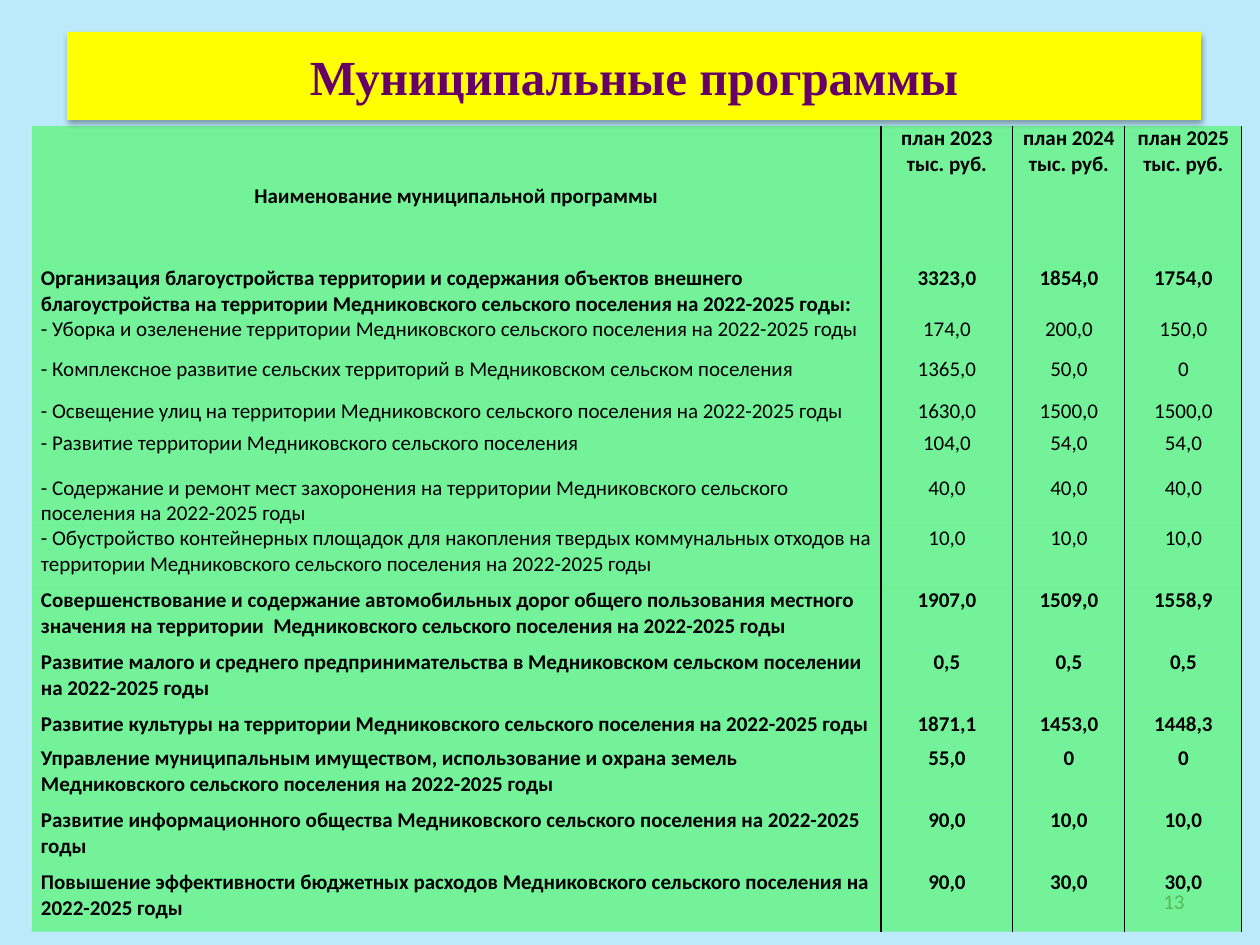
from lxml import etree
from pptx import Presentation
from pptx import util as u
from pptx.dml.color import RGBColor
from pptx.enum import text
from pptx.oxml import ns

SCALE = 914400 / 126
SKY = RGBColor(0xBC, 0xEA, 0xFB)
YELLOW = RGBColor(0xFF, 0xFF, 0x00)
PURPLE = RGBColor(0x66, 0x00, 0x66)
GREEN = RGBColor(0x00, 0xFF, 0x00)
BLACK = RGBColor(0x00, 0x00, 0x00)
GREY = RGBColor(0x8C, 0x8C, 0x8C)
NO_GRID_STYLE = "{2D5ABB26-0587-4C30-8999-92F81FD0307C}"

COLUMN_WIDTHS = [849, 132, 112, 117]
ROW_HEIGHTS = [140, 49, 40, 42, 32, 45, 49, 62, 62, 62, 34, 62, 62, 62]
PROGRAMS = [
    ("Наименование муниципальной программы", "план 2023 тыс. руб.", "план 2024 тыс. руб.", "план 2025 тыс. руб."),
    ("Организация благоустройства территории и содержания объектов внешнего благоустройства на территории Медниковского сельского поселения на 2022-2025 годы:", "3323,0", "1854,0", "1754,0"),
    ("- Уборка и озеленение территории Медниковского сельского поселения на 2022-2025 годы", "174,0", "200,0", "150,0"),
    ("- Комплексное развитие сельских территорий в Медниковском сельском поселения", "1365,0", "50,0", "0"),
    ("- Освещение улиц на территории Медниковского сельского поселения на 2022-2025 годы", "1630,0", "1500,0", "1500,0"),
    ("- Развитие территории Медниковского сельского поселения", "104,0", "54,0", "54,0"),
    ("- Содержание и ремонт мест захоронения на территории Медниковского сельского поселения на 2022-2025 годы", "40,0", "40,0", "40,0"),
    ("- Обустройство контейнерных площадок для накопления твердых коммунальных отходов на территории Медниковского сельского поселения на 2022-2025 годы", "10,0", "10,0", "10,0"),
    ("Совершенствование и содержание автомобильных дорог общего пользования местного значения на территории  Медниковского сельского поселения на 2022-2025 годы", "1907,0", "1509,0", "1558,9"),
    ("Развитие малого и среднего предпринимательства в Медниковском сельском поселении на 2022-2025 годы", "0,5", "0,5", "0,5"),
    ("Развитие культуры на территории Медниковского сельского поселения на 2022-2025 годы", "1871,1", "1453,0", "1448,3"),
    ("Управление муниципальным имуществом, использование и охрана земель Медниковского сельского поселения на 2022-2025 годы", "55,0", "0", "0"),
    ("Развитие информационного общества Медниковского сельского поселения на 2022-2025 годы", "90,0", "10,0", "10,0"),
    ("Повышение эффективности бюджетных расходов Медниковского сельского поселения на 2022-2025 годы", "90,0", "30,0", "30,0"),
]


def px(length):
    return u.Emu(round(length * SCALE))


def add_child(parent, tag, **attributes):
    return etree.SubElement(parent, ns.qn(tag), attributes)


def format_text(frame, align, size, color, bold=False, font="Calibri"):
    para = frame.paragraphs[0]
    para.alignment = align
    for span in para.runs:
        span.font.name = font
        span.font.size = u.Pt(size)
        span.font.bold = bold
        span.font.color.rgb = color


def add_page_number(page, left, top, width, height):
    box = page.shapes.add_textbox(px(left), px(top), px(width), px(height))
    frame = box.text_frame
    frame.word_wrap = True
    frame.vertical_anchor = text.MSO_ANCHOR.MIDDLE
    frame.text = "13"
    format_text(frame, text.PP_ALIGN.RIGHT, 12, GREY)


def add_border(properties, tag):
    line = add_child(properties, tag, w=str(u.Pt(0.75)))
    add_child(add_child(line, "a:solidFill"), "a:srgbClr", val=str(BLACK))


def fill_cell(cell, wording, is_header, is_name, bold):
    cell.margin_left = cell.margin_right = px(9)
    cell.margin_top = cell.margin_bottom = 0
    cell.vertical_anchor = text.MSO_ANCHOR.MIDDLE if is_header and is_name else text.MSO_ANCHOR.TOP
    cell.text_frame.text = wording
    align = text.PP_ALIGN.LEFT if is_name and not is_header else text.PP_ALIGN.CENTER
    format_text(cell.text_frame, align, 12, BLACK, bold)
    properties = cell._tc.get_or_add_tcPr()
    if not is_name:
        add_border(properties, "a:lnL")
    add_border(properties, "a:lnR")
    cell.fill.solid()
    cell.fill.fore_color.rgb = GREEN
    add_child(properties.find(ns.qn("a:solidFill"))[0], "a:alpha", val="39000")


def add_program_table(page, left, top):
    holder = page.shapes.add_table(
        len(PROGRAMS), len(COLUMN_WIDTHS), px(left), px(top), px(sum(COLUMN_WIDTHS)), px(sum(ROW_HEIGHTS))
    )
    table = holder.table
    table.horz_banding = False
    table._tbl.tblPr.find(ns.qn("a:tableStyleId")).text = NO_GRID_STYLE
    for column, width in zip(table.columns, COLUMN_WIDTHS):
        column.width = px(width)
    for row_index, (row, height, program) in enumerate(zip(table.rows, ROW_HEIGHTS, PROGRAMS)):
        row.height = px(height)
        bold = not program[0].startswith("-")
        for column_index, wording in enumerate(program):
            fill_cell(row.cells[column_index], wording, row_index == 0, column_index == 0, bold)


def place_title(page, left, top, width, height):
    title = page.shapes.title
    title.left, title.top, title.width, title.height = map(px, (left, top, width, height))
    title.fill.solid()
    title.fill.fore_color.rgb = YELLOW
    effects = add_child(title._element.spPr, "a:effectLst")
    shadow = add_child(
        effects, "a:outerShdw", blurRad=str(u.Pt(3.1)), dist=str(u.Pt(1.8)), dir="5400000", rotWithShape="0"
    )
    add_child(add_child(shadow, "a:srgbClr", val=str(BLACK)), "a:alpha", val="35000")
    frame = title.text_frame
    frame.word_wrap = True
    frame.vertical_anchor = text.MSO_ANCHOR.MIDDLE
    frame.text = "Муниципальные программы"
    format_text(frame, text.PP_ALIGN.CENTER, 28, PURPLE, True, "Times New Roman")
    page.shapes._spTree.append(title._element)


def main():
    deck = Presentation()
    deck.slide_width, deck.slide_height = px(1260), px(945)
    page = deck.slides.add_slide(deck.slide_layouts[5])
    page.background.fill.solid()
    page.background.fill.fore_color.rgb = SKY
    add_page_number(page, 903, 876, 294, 50)
    add_program_table(page, 32, 126)
    place_title(page, 67, 32, 1134, 88)
    deck.save("out.pptx")


if __name__ == "__main__":
    main()
